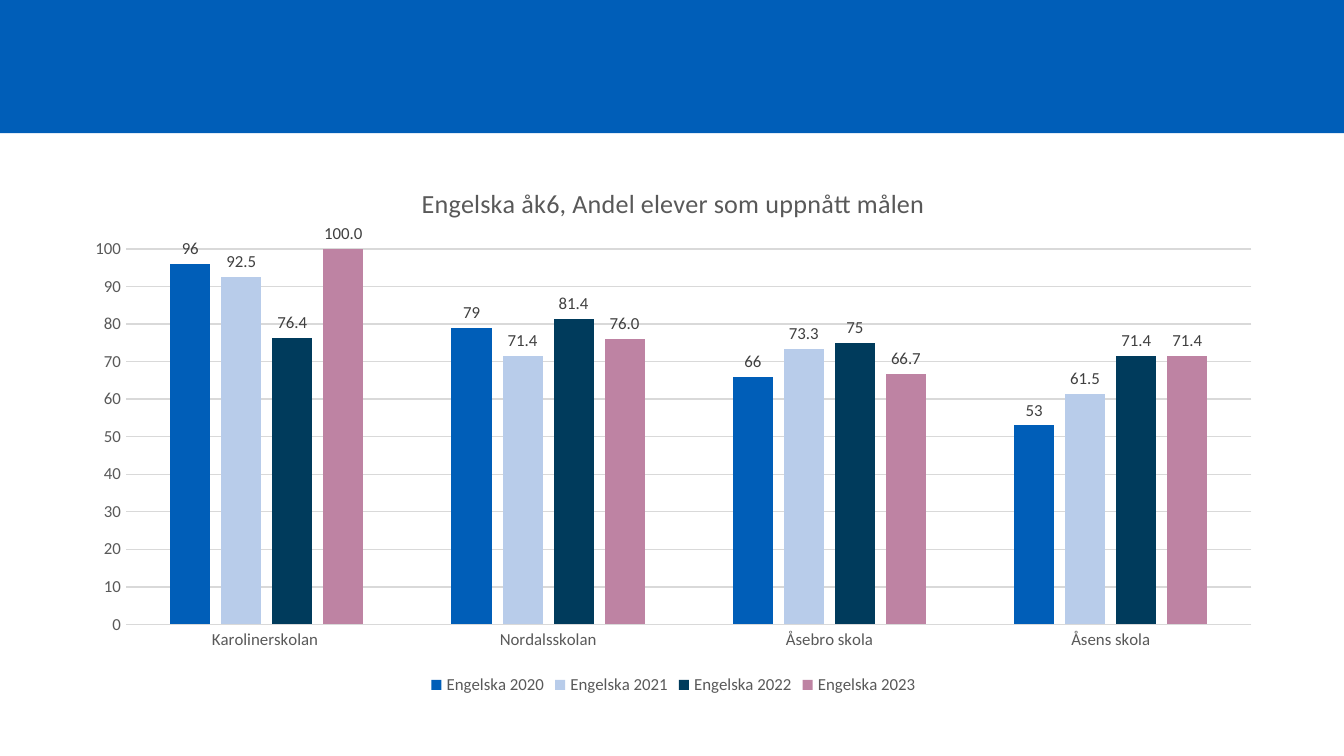
from dataclasses import dataclass

from pptx import Presentation
from pptx.chart.chart import Chart
from pptx.chart.data import CategoryChartData
from pptx.dml.color import RGBColor
from pptx.enum.chart import (
    XL_CHART_TYPE,
    XL_LABEL_POSITION,
    XL_LEGEND_POSITION,
    XL_TICK_MARK,
)
from pptx.enum.shapes import MSO_SHAPE
from pptx.slide import Slide
from pptx.text.text import Font
from pptx.util import Inches, Pt

WIDTH = 10
HEIGHT = WIDTH * 9 / 16
BLUE = "005EB8"
GREY = "595959"
RULE = "D9D9D9"
DARK = "404040"


@dataclass(frozen=True)
class Year:
    name: str
    rates: tuple[float, ...]
    color: str
    form: str = "General"


SCHOOLS = ("Karolinerskolan ", "Nordalsskolan", "Åsebro skola", "Åsens skola")
YEARS = (
    Year("Engelska 2020", (96, 79, 66, 53), BLUE),
    Year("Engelska 2021", (92.5, 71.4, 73.3, 61.5), "B8CCEA"),
    Year("Engelska 2022", (76.4, 81.4, 75, 71.4), "003B5C"),
    Year("Engelska 2023", (100, 76, 66.7, 71.4), "BE83A3", "0.0"),
)


def paint(target, color: str) -> None:
    if hasattr(target, "solid"):
        target.solid()
        target.fore_color.rgb = RGBColor.from_string(color)
    else:
        target.color.rgb = RGBColor.from_string(color)


def style(font: Font, size: float, color: str) -> None:
    font.name = "Calibri"
    font.size = Pt(size)
    font.bold = False
    paint(font, color)


def add_band(slide: Slide) -> None:
    band = slide.shapes.add_shape(
        MSO_SHAPE.RECTANGLE, Inches(0), Inches(0), Inches(WIDTH), Inches(0.99)
    )
    band.shadow.inherit = False
    paint(band.fill, BLUE)
    band.line.fill.background()


def add_chart(slide: Slide) -> Chart:
    data = CategoryChartData()
    data.categories = SCHOOLS
    for year in YEARS:
        data.add_series(year.name, year.rates, year.form)
    frame = slide.shapes.add_chart(
        XL_CHART_TYPE.COLUMN_CLUSTERED,
        Inches(0.53), Inches(1.21), Inches(8.96), Inches(4), data,
    )
    return frame.chart


def set_text(chart: Chart) -> None:
    style(chart.font, 10, "000000")
    chart.has_title = True
    para = chart.chart_title.text_frame.paragraphs[0]
    run = para.add_run()
    run.text = "Engelska åk6, Andel elever som uppnått målen"
    style(run.font, 14, GREY)
    chart.chart_title.include_in_layout = False
    chart.has_legend = True
    chart.legend.position = XL_LEGEND_POSITION.BOTTOM
    chart.legend.include_in_layout = False
    style(chart.legend.font, 9, GREY)


def set_axes(chart: Chart) -> None:
    for axis in (chart.category_axis, chart.value_axis):
        axis.major_tick_mark = XL_TICK_MARK.NONE
        axis.minor_tick_mark = XL_TICK_MARK.NONE
        style(axis.tick_labels.font, 9, GREY)
    rates = chart.value_axis
    rates.minimum_scale = 0
    rates.maximum_scale = 100
    rates.major_unit = 10
    rates.tick_labels.number_format = "General"
    rates.tick_labels.number_format_is_linked = False
    rates.format.line.fill.background()
    for line in (chart.category_axis.format.line, rates.major_gridlines.format.line):
        paint(line, RULE)
        line.width = Pt(0.75)


def set_bars(chart: Chart) -> None:
    plot = chart.plots[0]
    plot.gap_width = 219
    plot.overlap = -27
    plot.vary_by_categories = False
    for year, bars in zip(YEARS, plot.series):
        paint(bars.format.fill, year.color)
        bars.invert_if_negative = False
        labels = bars.data_labels
        labels.show_value = True
        labels.position = XL_LABEL_POSITION.OUTSIDE_END
        labels.number_format = year.form
        labels.number_format_is_linked = False
        style(labels.font, 9, DARK)


def main() -> None:
    deck = Presentation()
    deck.slide_width = Inches(WIDTH)
    deck.slide_height = Inches(HEIGHT)
    slide = deck.slides.add_slide(deck.slide_layouts[6])
    add_band(slide)
    chart = add_chart(slide)
    set_text(chart)
    set_axes(chart)
    set_bars(chart)
    deck.save("out.pptx")


if __name__ == "__main__":
    main()
